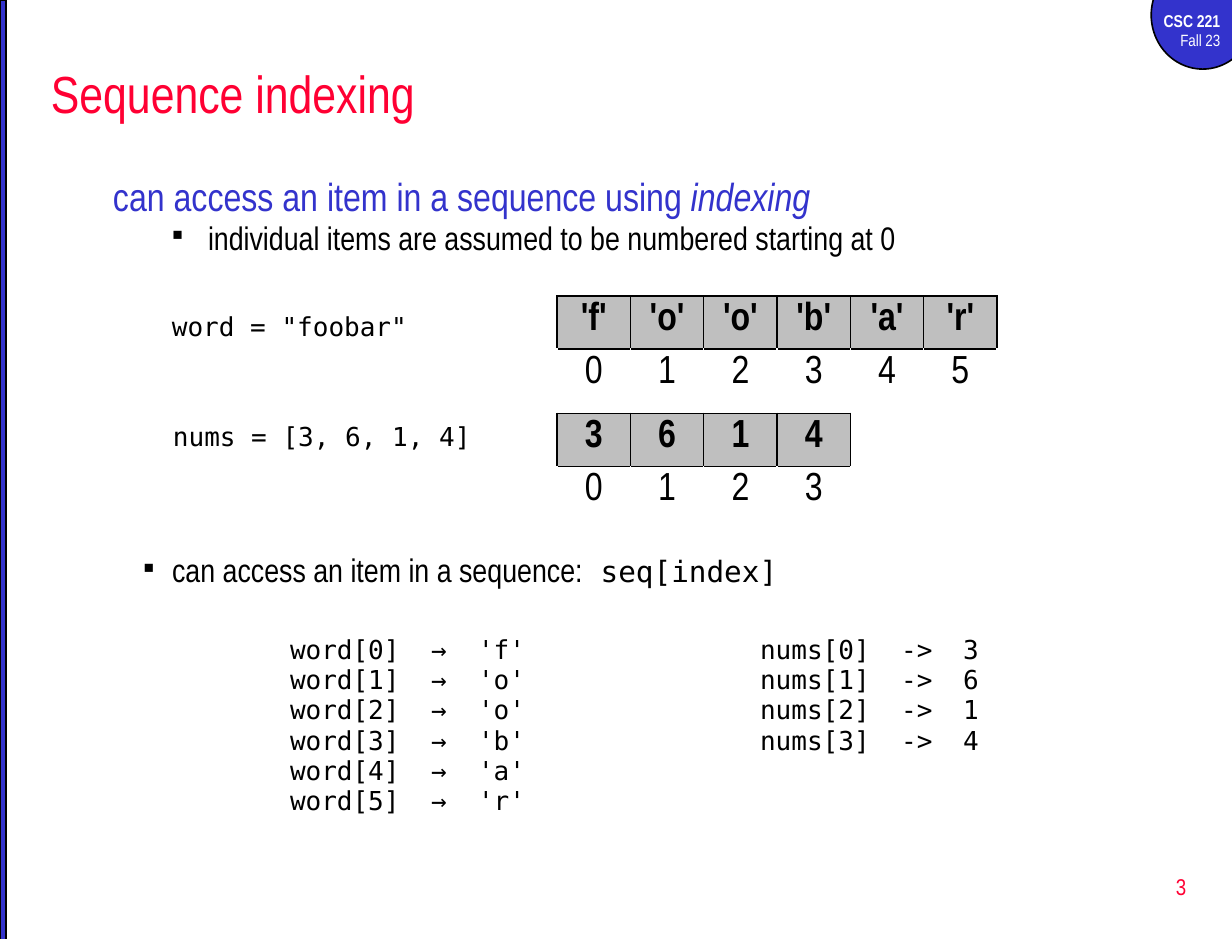
from lxml.etree import SubElement
from pptx import Presentation
from pptx.dml.color import RGBColor as Color
from pptx.enum.shapes import MSO_SHAPE as Shape
from pptx.enum.text import MSO_ANCHOR as Anchor, PP_ALIGN as Align
from pptx.oxml.ns import qn
from pptx.util import Inches, Pt

PX = 7795  # EMU per pixel
COLORS = {"blue": "3333CC", "red": "FF0033", "black": "000000",
          "white": "FFFFFF", "gray": "BFBFBF"}
NARROW, MONO = "Arial Narrow", "DejaVu Sans Mono"


def style(para, size, color="black", font=NARROW, bold=False):
    for span in para.runs:
        span.font.size = Pt(size)
        span.font.name = font
        span.font.bold = bold
        span.font.color.rgb = Color.from_string(COLORS[color])


def add_text(left, top, width, height, text, size, color="black", font=NARROW,
             anchor=Anchor.TOP, align=Align.LEFT):
    box = page.shapes.add_textbox(left * PX, top * PX, width * PX, height * PX)
    frame = box.text_frame
    frame.margin_left = frame.margin_right = frame.margin_top = frame.margin_bottom = 0
    frame.word_wrap = True
    frame.vertical_anchor = anchor
    frame.text = text
    for para in frame.paragraphs:
        para.alignment = align
        style(para, size, color, font)
    return frame


deck = Presentation()
deck.slide_width, deck.slide_height = Inches(10.5), Inches(8)
page = deck.slides.add_slide(deck.slide_layouts[6])

# Side bar and course badge
for kind, left, top, width, height in [(Shape.OVAL, 1151, -39, 103, 108),
                                       (Shape.RECTANGLE, 0, 0, 6, 939)]:
    shape = page.shapes.add_shape(kind, left * PX, top * PX, width * PX, height * PX)
    shape.shadow.inherit = False
    shape.fill.solid()
    shape.fill.fore_color.rgb = Color.from_string(COLORS["blue"])
    shape.line.color.rgb = Color.from_string(COLORS["black"])
    shape.line.width = Pt(1)
badge = add_text(1134, 10, 86, 42, "CSC 221\nFall 23", 10, "white", align=Align.RIGHT)
style(badge.paragraphs[0], 10.5, "white", bold=True)

# Title and page number
add_text(51, 49, 1140, 88, "Sequence indexing", 32, "red", anchor=Anchor.MIDDLE)
add_text(941, 855, 245, 62, "3", 14, "red", anchor=Anchor.MIDDLE, align=Align.RIGHT)

# Statements
intro = add_text(113, 172, 1090, 90, "can access an item in a sequence using ", 24, "blue")
heading = intro.paragraphs[0]
heading.add_run().text = "indexing"
style(heading, 24, "blue")
heading.runs[1].font.italic = True
detail = intro.add_paragraph()
detail.text = "individual items are assumed to be numbered starting at 0"
detail.line_spacing = 0.8
detail.space_before = Pt(4)
style(detail, 20)

access = add_text(113, 550, 1090, 45, "can access an item in a sequence:", 20).paragraphs[0]
span = access.add_run()
span.text = " seq[index]"
span.font.name, span.font.size = MONO, Pt(18)
span.font.color.rgb = Color.from_string(COLORS["black"])

for para, margin, hang in [(detail, 95, 36), (access, 59, 29)]:
    props = para._p.get_or_add_pPr()
    props.set("marL", str(margin * PX))
    props.set("indent", str(-hang * PX))
    SubElement(props, qn("a:buFont"), typeface=NARROW)
    SubElement(props, qn("a:buChar"), char="▪")

# Sequence definitions
add_text(172, 310, 370, 34, 'word = "foobar"', 16, font=MONO)
add_text(173, 420, 370, 34, "nums = [3, 6, 1, 4]", 16, font=MONO)

# Tables of items over their indexes
word = [f"'{letter}'" for letter in "foobar"]
nums = ["3", "6", "1", "4"]
for top, items in [(296, word), (413, nums)]:
    count = len(items)
    frame = page.shapes.add_table(2, count, 557 * PX, top * PX,
                                  440 * PX * count // 6, 96 * PX)
    table = frame.table
    for column in table.columns:
        column.width = 440 * PX // 6
    for row, values in enumerate([items, range(count)]):
        for index, value in enumerate(values):
            cell = table.cell(row, index)
            cell.margin_left = cell.margin_right = cell.margin_bottom = 0
            cell.margin_top = 6 * PX
            cell.text = str(value)
            para = cell.text_frame.paragraphs[0]
            para.alignment = Align.CENTER
            style(para, 24, bold=row == 0)
            for side in ("lnL", "lnR", "lnT", "lnB"):
                edge = "black" if row == 0 or side == "lnT" else "white"
                line = SubElement(cell._tc.get_or_add_tcPr(), qn(f"a:{side}"), w="12700")
                SubElement(SubElement(line, qn("a:solidFill")), qn("a:srgbClr"),
                           val=COLORS[edge])
            cell.fill.solid()
            cell.fill.fore_color.rgb = Color.from_string(COLORS["white" if row else "gray"])

# Lookup results, aligned on tab stops
lines = []
for index, letter in enumerate(word):
    line = f"word[{index}]\t→\t{letter}"
    if index < len(nums):
        line += f"\tnums[{index}]\t->\t{nums[index]}"
    lines.append(line)
results = add_text(290, 639, 900, 190, "\n".join(lines), 16, font=MONO)
for index, para in enumerate(results.paragraphs):
    para.line_spacing = 0.8
    para.space_before = Pt(3.2 if index else 0)
    tabs = SubElement(para._p.get_or_add_pPr(), qn("a:tabLst"))
    for stop in (141, 188, 470, 611, 673):
        SubElement(tabs, qn("a:tab"), pos=str(stop * PX), algn="l")

deck.save("out.pptx")
